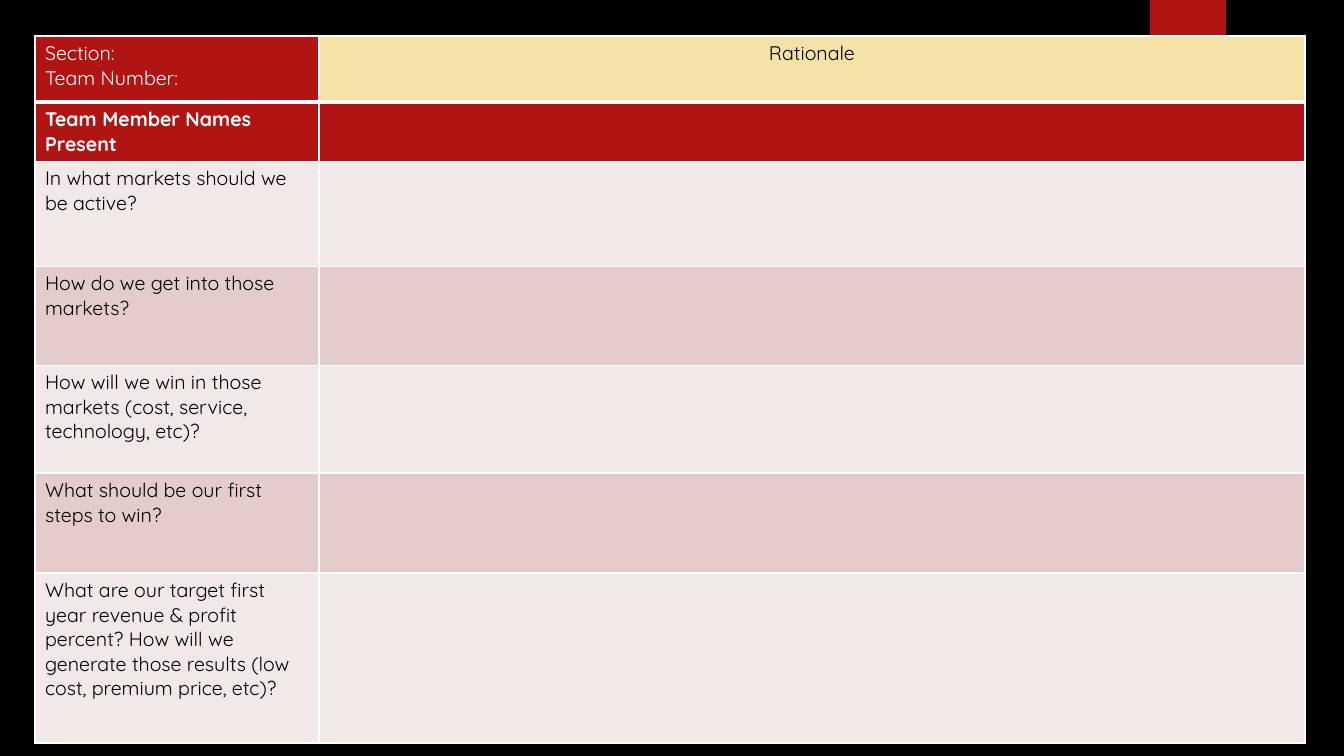
from lxml import etree
from pptx import Presentation
from pptx.dml.color import RGBColor
from pptx.enum.shapes import MSO_SHAPE
from pptx.enum.text import PP_ALIGN
from pptx.oxml.ns import qn
from pptx.util import Emu, Pt

RECT = MSO_SHAPE.RECTANGLE
LEFT = PP_ALIGN.LEFT
CENTER = PP_ALIGN.CENTER

BLACK = RGBColor(0x00, 0x00, 0x00)
WHITE = RGBColor(0xFF, 0xFF, 0xFF)
RED = RGBColor(0xB0, 0x15, 0x13)
CREAM = RGBColor(0xF5, 0xE2, 0xA9)
PALE = RGBColor(0xF2, 0xE8, 0xE7)
ROSE = RGBColor(0xE4, 0xCC, 0xCC)

COLS = [284, 986]
ROWS = [66, 59, 105, 99, 108, 100, 170]
ASKS = [
    "In what markets should we be active?",
    "How do we get into those markets?",
    "How will we win in those markets (cost, service, technology, etc)?",
    "What should be our first steps to win?",
    "What are our target first year revenue & profit percent? How will we "
    "generate those results (low cost, premium price, etc)?",
]


def px(count):
    return Emu(round(count * 914400 / 100.8))


class Deck:
    font = "Quicksand"
    size = Pt(14)

    def __init__(self, wide, high):
        self.prs = Presentation()
        self.prs.slide_width = px(wide)
        self.prs.slide_height = px(high)
        self.slide = self.prs.slides.add_slide(self.prs.slide_layouts[6])

    def back(self, color):
        fill = self.slide.background.fill
        fill.solid()
        fill.fore_color.rgb = color

    def block(self, x, y, w, h, color):
        shape = self.slide.shapes.add_shape(RECT, px(x), px(y), px(w), px(h))
        shape.shadow.inherit = False
        shape.fill.solid()
        shape.fill.fore_color.rgb = color
        shape.line.fill.background()

    def table(self, x, y, cols, rows):
        frame = self.slide.shapes.add_table(
            len(rows), len(cols), px(x), px(y), px(sum(cols)), px(sum(rows)))
        grid = frame.table
        for col, wide in zip(grid.columns, cols):
            col.width = px(wide)
        for row, high in zip(grid.rows, rows):
            row.height = px(high)
        return grid

    def cell(self, cell, fill, text="", color=BLACK, bold=False, align=LEFT, base=1):
        cell.fill.solid()
        cell.fill.fore_color.rgb = fill
        cell.text = text
        for para in cell.text_frame.paragraphs:
            para.alignment = align
            para.font.name = self.font
            para.font.size = self.size
            para.font.bold = bold
            para.font.color.rgb = color
        self.edge(cell, base)

    def edge(self, cell, base):
        props = cell._tc.get_or_add_tcPr()
        sides = {"lnL": 1, "lnR": 1, "lnT": 1, "lnB": base}
        for spot, (side, width) in enumerate(sides.items()):
            line = etree.Element(qn("a:" + side), w=str(Pt(width)))
            fill = etree.SubElement(line, qn("a:solidFill"))
            etree.SubElement(fill, qn("a:srgbClr"), val=str(WHITE))
            props.insert(spot, line)

    def save(self):
        self.prs.save("out.pptx")


def main():
    deck = Deck(1344, 756)
    deck.back(BLACK)
    deck.block(1150, 0, 76, 126, RED)
    grid = deck.table(35, 36, COLS, ROWS)
    deck.cell(grid.cell(0, 0), RED, "Section:\nTeam Number:", WHITE, base=3)
    deck.cell(grid.cell(0, 1), CREAM, "Rationale", align=CENTER, base=3)
    deck.cell(grid.cell(1, 0), RED, "Team Member Names Present", WHITE, bold=True)
    deck.cell(grid.cell(1, 1), RED)
    for row, ask in enumerate(ASKS, 2):
        fill = ROSE if row % 2 else PALE
        deck.cell(grid.cell(row, 0), fill, ask)
        deck.cell(grid.cell(row, 1), fill)
    deck.save()


if __name__ == "__main__":
    main()
